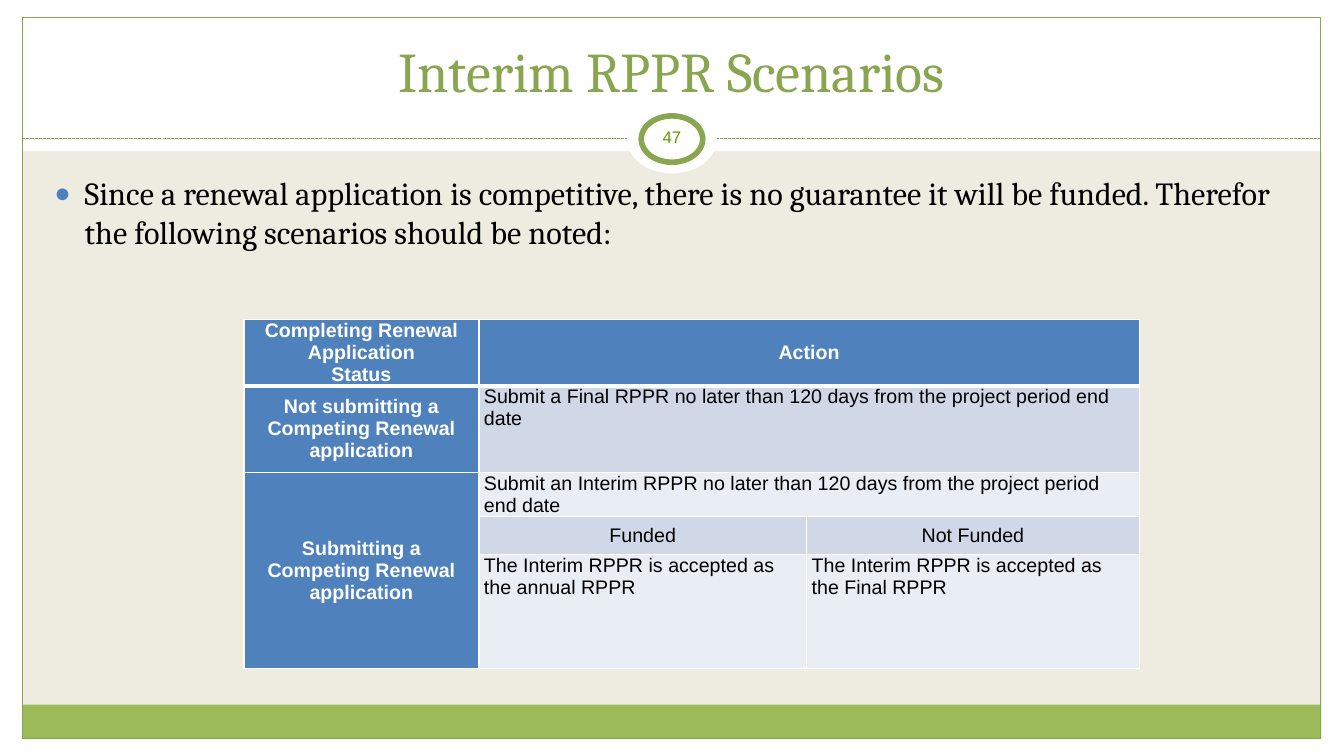
from lxml import etree
from pptx import Presentation
from pptx.dml.color import RGBColor
from pptx.enum.dml import MSO_LINE
from pptx.enum.shapes import MSO_CONNECTOR, MSO_SHAPE
from pptx.enum.text import MSO_ANCHOR, MSO_AUTO_SIZE, PP_ALIGN
from pptx.oxml import parse_xml
from pptx.oxml.ns import nsdecls, qn
from pptx.util import Inches, Pt

COLORS = {name: RGBColor.from_string(value) for name, value in {
    "sand": "EEECE1", "white": "FFFFFF", "black": "000000",
    "green": "9BBB59", "olive": "89A54F", "number": "669900",
    "blue": "4F81BD", "band": "D0D8E8", "pale": "E9EDF4",
}.items()}

deck = Presentation()
deck.slide_width, deck.slide_height = Inches(13.33), Inches(7.5)
page = deck.slides.add_slide(deck.slide_layouts[1])
page.background.fill.solid()
page.background.fill.fore_color.rgb = COLORS["sand"]


def place(shape, left, top, width, height):
    shape.left, shape.top = Inches(left), Inches(top)
    shape.width, shape.height = Inches(width), Inches(height)


def style(para, font, size, color, bold=False, align=PP_ALIGN.LEFT):
    para.alignment = align
    para.font.name, para.font.size, para.font.bold = font, Pt(size), bold
    para.font.color.rgb = COLORS[color]


# Frame: white margins, green footer, outline and number badge
RECT, OVAL = MSO_SHAPE.RECTANGLE, MSO_SHAPE.OVAL
frame_parts = [
    (RECT, 0, 7.33, 13.33, 0.17, "white", None, 0),
    (RECT, 0, 0, 13.33, 1.5, "white", None, 0),
    (RECT, 0, 0, 0.22, 7.5, "white", None, 0),
    (RECT, 13.11, 0, 0.22, 7.5, "white", None, 0),
    (RECT, 0.22, 6.99, 12.88, 0.34, "green", None, 0),
    (RECT, 0.22, 0.17, 12.88, 7.16, None, "olive", 0.75),
    (OVAL, 6.22, 1.05, 0.89, 0.67, "white", None, 0),
    (OVAL, 6.36, 1.15, 0.61, 0.46, "white", "olive", 4),
]
divider = page.shapes.add_connector(
    MSO_CONNECTOR.STRAIGHT, Inches(0.22), Inches(1.37), Inches(13.1), Inches(1.37))
divider.line.color.rgb = COLORS["olive"]
divider.line.width = Pt(0.75)
divider.line.dash_style = MSO_LINE.SQUARE_DOT
etree.SubElement(divider.element.spPr, qn("a:effectLst"))

for kind, left, top, width, height, fill, line, weight in frame_parts:
    part = page.shapes.add_shape(
        kind, Inches(left), Inches(top), Inches(width), Inches(height))
    part.shadow.inherit = False
    if fill:
        part.fill.solid()
        part.fill.fore_color.rgb = COLORS[fill]
    else:
        part.fill.background()
    if line:
        part.line.color.rgb = COLORS[line]
        part.line.width = Pt(weight)
    else:
        part.line.fill.background()

# The divider lies above the bands and below the badge
page.shapes.element.remove(divider.element)
badge = next(shape for shape in page.shapes
             if not shape.is_placeholder and shape.auto_shape_type == OVAL)
badge.element.addprevious(divider.element)

number_box = page.shapes.add_textbox(
    Inches(6.33), Inches(1.21), Inches(0.67), Inches(0.3))
number_box.text_frame.word_wrap = True
number_box.text_frame.text = "47"
style(number_box.text_frame.paragraphs[0], "Arial", 12, "number", align=PP_ALIGN.CENTER)

# Title and body, brought in front of the frame
title, body = page.shapes.title, page.placeholders[1]
place(title, 0.44, 0.25, 12.44, 0.83)
title.text_frame.text = "Interim RPPR Scenarios"
title.text_frame.vertical_anchor = MSO_ANCHOR.BOTTOM
style(title.text_frame.paragraphs[0], "Cambria", 40, "olive", align=PP_ALIGN.CENTER)

place(body, 0.44, 1.67, 12.4, 5)
body.text_frame.text = (
    "Since a renewal application is competitive, there is no guarantee it will be "
    "funded. Therefor the following scenarios should be noted:")
intro = body.text_frame.paragraphs[0]
style(intro, "Cambria", 23, "black")
intro.space_before = Pt(4.6)
bullet = intro._p.get_or_add_pPr()
bullet.set("marL", str(Inches(0.3)))
bullet.set("indent", str(Inches(-0.3)))
for tag, attribute, value in [("buSzPct", "val", "85000"),
                              ("buFont", "typeface", "Arial"),
                              ("buChar", "char", "●")]:
    etree.SubElement(bullet, qn(f"a:{tag}")).set(attribute, value)
bullet.find(qn("a:buSzPct")).addprevious(parse_xml(
    f'<a:buClr {nsdecls("a")}><a:srgbClr val="{COLORS["blue"]}"/></a:buClr>'))

for placeholder in (title, body):
    placeholder.text_frame.auto_size = MSO_AUTO_SIZE.NONE
    page.shapes.element.append(placeholder.element)

# Scenario table
column_widths = [2.33, 3.25, 3.3]
row_heights = [0.63, 0.86, 0.42, 0.38, 1.13]
table = page.shapes.add_table(
    len(row_heights), len(column_widths),
    Inches(2.42), Inches(3.17), Inches(8.88), Inches(3.42)).table
table.first_row = table.horz_banding = False
for column, width in zip(table.columns, column_widths):
    column.width = Inches(width)
for row, height in zip(table.rows, row_heights):
    row.height = Inches(height)

for row in range(3):
    table.cell(row, 1).merge(table.cell(row, 2))
table.cell(2, 0).merge(table.cell(4, 0))

texts = [
    ["Completing Renewal Application\nStatus", "Action", ""],
    ["Not submitting a Competing Renewal application",
     "Submit a Final RPPR no later than 120 days from the project period end date", ""],
    ["Submitting a Competing Renewal application",
     "Submit an Interim RPPR no later than 120 days from the project period end date", ""],
    ["", "Funded", "Not Funded"],
    ["", "The Interim RPPR is accepted as the annual RPPR",
     "The Interim RPPR is accepted as the Final RPPR"],
]
for row, row_texts in enumerate(texts):
    for column, text in enumerate(row_texts):
        cell = table.cell(row, column)
        heading = row == 0 or column == 0
        centered = heading or row == 3
        cell.text = text
        cell.margin_left = cell.margin_right = Inches(0.05)
        cell.margin_top = cell.margin_bottom = 0
        cell.vertical_anchor = MSO_ANCHOR.MIDDLE if centered else MSO_ANCHOR.TOP
        for para in cell.text_frame.paragraphs:
            style(para, "Arial", 14, "white" if heading else "black", heading,
                  PP_ALIGN.CENTER if centered else PP_ALIGN.LEFT)
        cell.fill.solid()
        cell.fill.fore_color.rgb = COLORS[
            "blue" if heading else "band" if row % 2 else "pale"]
        for order, side in enumerate("LRTB"):
            thick = (row, side) in [(0, "B"), (1, "T")]
            cell._tc.get_or_add_tcPr().insert(order, parse_xml(
                f'<a:ln{side} {nsdecls("a")} w="{Pt(3 if thick else 1)}"><a:solidFill>'
                f'<a:srgbClr val="{COLORS["white"]}"/></a:solidFill></a:ln{side}>'))

deck.save("out.pptx")
